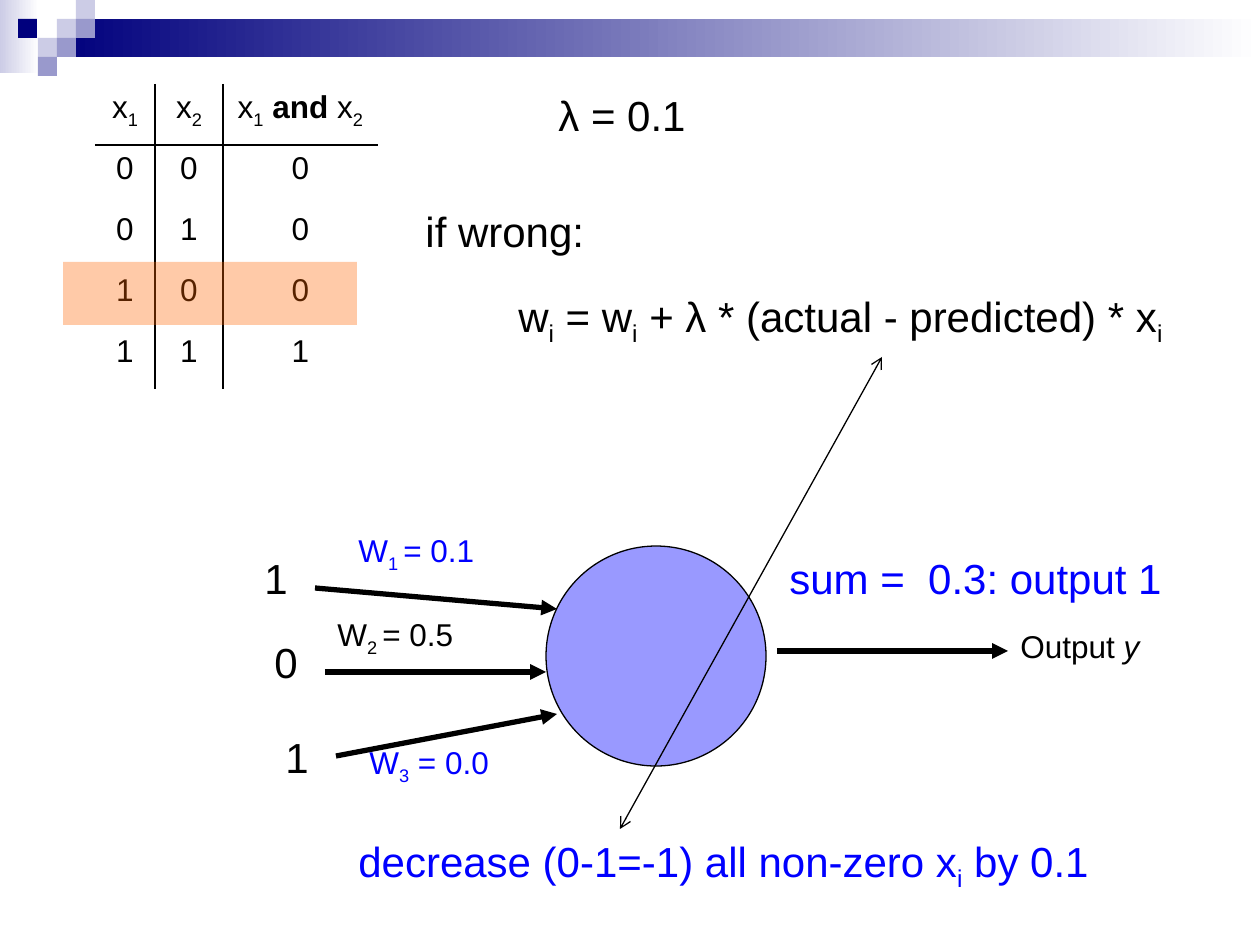
from lxml.etree import SubElement
from pptx import Presentation
from pptx.dml.color import RGBColor
from pptx.enum.shapes import MSO_CONNECTOR, MSO_SHAPE
from pptx.enum.text import MSO_AUTO_SIZE, PP_ALIGN
from pptx.oxml import parse_xml
from pptx.oxml.ns import nsdecls, qn
from pptx.util import Emu, Pt

BLACK = RGBColor(0, 0, 0)
WHITE = RGBColor(255, 255, 255)
BLUE = RGBColor(0, 0, 255)
NAVY = RGBColor(0, 0, 0x7D)
PALE = RGBColor(0xCC, 0xCC, 0xE6)
MID = RGBColor(0x99, 0x99, 0xCC)
LILAC = RGBColor(0x99, 0x99, 0xFF)
ORANGE = RGBColor(0xFF, 0x66, 0)
FONT = "Arial"

# left, top, width, height, colour that fades to white
FADES = [(0, 0, 39, 73, PALE), (57, 19, 1203, 38, NAVY)]
SIDE = 19
TILES = [(57, 19, PALE), (76, 0, PALE), (76, 19, MID), (38, 38, PALE),
         (18, 19, NAVY), (57, 38, MID), (38, 57, MID)]

# Text is a list of (words, style) runs; style is "", "sub", "b" or "i"
X1 = [("x", ""), ("1", "sub")]
X2 = [("x", ""), ("2", "sub")]
HEAD = [X1, X2, X1 + [(" and ", "b")] + X2]
TRUTH = [(0, 0, 0), (0, 1, 0), (1, 0, 0), (1, 1, 1)]
TABLE = (95, 84)
COLS = [60, 68, 155]
ROW = 61

NODE = (546, 546, 220, 220)
BAND = (63, 262, 294, 63)

# left, top, width, height, size, colour, wrap, runs
NOTES = [
    (1008, 621, 189, 50, 18, BLACK, True, [("Output ", ""), ("y", "i")]),
    (252, 546, 158, 63, 24, BLACK, True, [("1", "")]),
    (262, 630, 63, 63, 24, BLACK, True, [("0", "")]),
    (273, 725, 49, 63, 24, BLACK, False, [("1", "")]),
    (346, 525, 189, 50, 18, BLUE, True,
     [("W", ""), ("1 ", "sub"), ("= 0.1", "")]),
    (325, 609, 189, 50, 18, BLACK, True,
     [("W", ""), ("2 ", "sub"), ("= 0.5", "")]),
    (357, 737, 189, 50, 18, BLUE, True,
     [("W", ""), ("3", "sub"), (" = 0.0", "")]),
    (546, 83, 156, 63, 24, BLACK, False, [("λ = 0.1", "")]),
    (506, 284, 680, 63, 24, BLACK, False,
     [("w", ""), ("i", "sub"), (" = w", ""), ("i", "sub"),
      (" + λ * (actual - predicted) * x", ""), ("i", "sub")]),
    (413, 199, 185, 63, 24, BLACK, False, [("if wrong:", "")]),
    (346, 829, 779, 63, 24, BLUE, False,
     [("decrease (0-1=-1) all non-zero x", ""), ("i", "sub"),
      (" by 0.1", "")]),
    (777, 546, 402, 63, 24, BLUE, False, [("sum =  0.3: output 1", "")]),
]

# from x, y, to x, y, weight, head end, tail end
ARROWS = [
    (777, 651, 1008, 651, 3, None, "triangle"),
    (325, 672, 546, 672, 3, None, "triangle"),
    (315, 588, 557, 609, 3, None, "triangle"),
    (336, 756, 557, 714, 3, None, "triangle"),
    (620, 829, 882, 357, 0.75, "arrow", "arrow"),
]


def px(*nums):
    return [Emu(round(n * 914400 / 126)) for n in nums]


def write(para, runs, size, color):
    for words, style in runs:
        run = para.add_run()
        run.text = words
        font = run.font
        font.name, font.size, font.color.rgb = FONT, Pt(size), color
        if style == "b":
            font.bold = True
        elif style == "i":
            font.italic = True
        elif style == "sub":
            run._r.get_or_add_rPr().set("baseline", "-25000")


def add_shape(slide, kind, box, color):
    shape = slide.shapes.add_shape(kind, *px(*box))
    shape.shadow.inherit = False
    shape.fill.solid()
    shape.fill.fore_color.rgb = color
    shape.line.fill.background()
    return shape


def add_fade(slide, box, color):
    fill = add_shape(slide, MSO_SHAPE.RECTANGLE, box, color).fill
    fill.gradient()
    fill.gradient_angle = 0
    for stop, tone in zip(fill.gradient_stops, (color, WHITE)):
        stop.color.rgb = tone


def set_edges(cell, shown):
    """Rule the sides named in shown (from L, R, T, B) and clear the rest."""
    cell.fill.background()
    props = cell._tc.get_or_add_tcPr()
    for i, side in enumerate("LRTB"):
        paint = (f'<a:solidFill><a:srgbClr val="{BLACK}"/></a:solidFill>'
                 if side in shown else "<a:noFill/>")
        props.insert(i, parse_xml(
            f'<a:ln{side} {nsdecls("a")} w="12700">{paint}</a:ln{side}>'))


def add_truth(slide):
    rows = HEAD, *([[(str(n), "")] for n in row] for row in TRUTH)
    high, wide = len(rows), len(COLS)
    table = slide.shapes.add_table(
        high, wide, *px(*TABLE, sum(COLS), ROW * high)).table
    table.first_row = table.horz_banding = False
    for col, width in zip(table.columns, px(*COLS)):
        col.width = width
    for r, row in enumerate(rows):
        table.rows[r].height = px(ROW)[0]
        for c, runs in enumerate(row):
            cell = table.cell(r, c)
            para = cell.text_frame.paragraphs[0]
            para.alignment = PP_ALIGN.CENTER
            write(para, runs, 18, BLACK)
            set_edges(cell, ("L" if c else "") + ("R" if c < wide - 1 else "")
                      + {0: "B", 1: "T"}.get(r, ""))


def add_note(slide, box, size, color, wrap, runs):
    frame = slide.shapes.add_textbox(*px(*box)).text_frame
    frame.word_wrap = wrap
    frame.auto_size = MSO_AUTO_SIZE.SHAPE_TO_FIT_TEXT
    write(frame.paragraphs[0], runs, size, color)


def add_arrow(slide, ends, weight, head, tail):
    link = slide.shapes.add_connector(MSO_CONNECTOR.STRAIGHT, *px(*ends))
    link.line.color.rgb = BLACK
    link.line.width = Pt(weight)
    line = link.line._get_or_add_ln()
    for tag, kind in (("a:headEnd", head), ("a:tailEnd", tail)):
        if kind:
            SubElement(line, qn(tag), type=kind)
    SubElement(link._element.spPr, qn("a:effectLst"))


def main():
    deck = Presentation()
    deck.slide_width, deck.slide_height = px(1260, 945)
    slide = deck.slides.add_slide(deck.slide_layouts[6])
    for *box, color in FADES:
        add_fade(slide, box, color)
    for x, y, color in TILES:
        add_shape(slide, MSO_SHAPE.RECTANGLE, (x, y, SIDE, SIDE), color)
    add_truth(slide)
    node = add_shape(slide, MSO_SHAPE.OVAL, NODE, LILAC)
    node.line.color.rgb = BLACK
    node.line.width = Pt(0.75)
    for *box, size, color, wrap, runs in NOTES:
        add_note(slide, box, size, color, wrap, runs)
    band = add_shape(slide, MSO_SHAPE.RECTANGLE, BAND, ORANGE)
    tint = band._element.spPr.find(".//" + qn("a:srgbClr"))
    SubElement(tint, qn("a:alpha"), val="34000")
    for *ends, weight, head, tail in ARROWS:
        add_arrow(slide, ends, weight, head, tail)
    deck.save("out.pptx")


if __name__ == "__main__":
    main()
